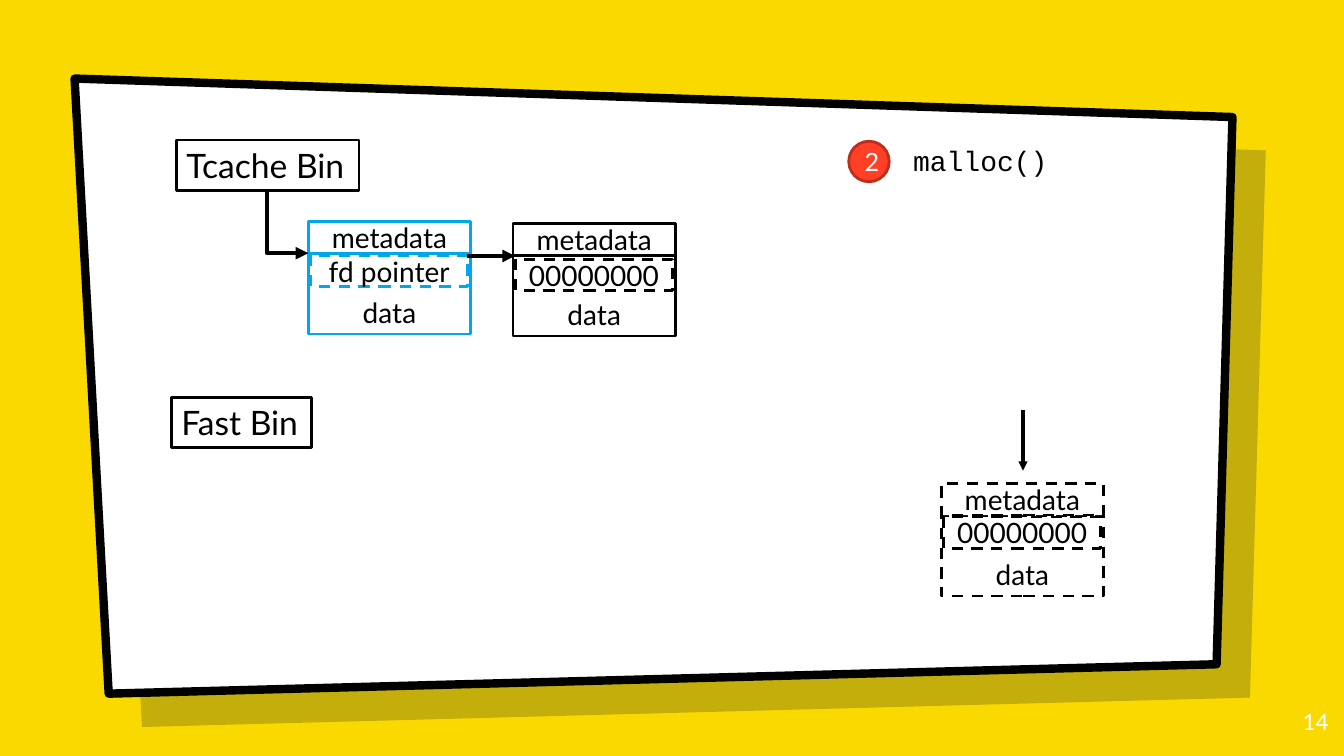
from lxml import etree
from pptx import Presentation
from pptx.dml.color import RGBColor
from pptx.enum import dml, shapes, text
from pptx.oxml import ns
from pptx.util import Cm, Pt

HUES = {
    "page": "FAD900", "shade": "001936", "white": "FFFFFF", "black": "000000",
    "blue": "00A7EB", "red": "FF4026", "rust": "BD2F1C",
}
SANS, MONO = "Lato", "Courier New"
LEFT, MID, RIGHT = text.PP_ALIGN.LEFT, text.PP_ALIGN.CENTER, text.PP_ALIGN.RIGHT
PANEL = [(1.88, 1.98), (31.06, 2.95), (30.66, 16.74), (2.74, 17.48)]


def hue(name):
    return RGBColor.from_string(HUES[name])


def write(frame, words, size, align=LEFT, color="black", font=SANS):
    para = frame.paragraphs[0]
    para.alignment = align
    run = para.add_run()
    run.text = words
    run.font.name = font
    run.font.size = Pt(size)
    run.font.color.rgb = hue(color)


def paint(shape, fill, line=None, width=2, dash=False):
    shape.shadow.inherit = False
    shape.fill.solid()
    shape.fill.fore_color.rgb = hue(fill)
    if line is None:
        shape.line.fill.background()
        return
    shape.line.color.rgb = hue(line)
    shape.line.width = Pt(width)
    if dash:
        shape.line.dash_style = dml.MSO_LINE.DASH


def block(slide, box, words, size=20, line="black", dash=False, align=MID,
          anchor=text.MSO_ANCHOR.MIDDLE, font=SANS):
    shape = slide.shapes.add_shape(shapes.MSO_SHAPE.RECTANGLE, *map(Cm, box))
    paint(shape, "white", line, dash=dash)
    shape.text_frame.vertical_anchor = anchor
    write(shape.text_frame, words, size, align, font=font)
    return shape


def arrow(slide, start, end, width=3, bent=False):
    (left, top), (right, low) = start, end
    if bent:
        mid_x, mid_y = (left + right) / 2, (top + low) / 2
        half_w, half_h = (low - top) / 2, (right - left) / 2
        start = mid_x + half_w, mid_y - half_h
        end = mid_x - half_w, mid_y + half_h
    kind = shapes.MSO_CONNECTOR.ELBOW if bent else shapes.MSO_CONNECTOR.STRAIGHT
    link = slide.shapes.add_connector(kind, *map(Cm, start + end))
    link.line.color.rgb = hue("black")
    link.line.width = Pt(width)
    props = link._element.spPr
    if bent:
        props.find(ns.qn("a:prstGeom")).set("prst", "bentConnector2")
        props.find(ns.qn("a:xfrm")).set("rot", str(270 * 60000))
    tip = etree.SubElement(props.find(ns.qn("a:ln")), ns.qn("a:tailEnd"))
    tip.set("type", "triangle")
    etree.SubElement(props, ns.qn("a:effectLst"))


def panel(slide, shift, fill, line=None):
    points = [(Cm(x + shift), Cm(y + shift)) for x, y in PANEL]
    path = slide.shapes.build_freeform(*points[0])
    path.add_line_segments(points[1:], close=True)
    shape = path.convert_to_shape()
    paint(shape, fill, line, 6)
    return shape


def frame(slide):
    slide.background.fill.solid()
    slide.background.fill.fore_color.rgb = hue("page")
    shade = panel(slide, 0.84, "shade")
    tint = shade._element.spPr.find(ns.qn("a:solidFill"))[0]
    etree.SubElement(tint, ns.qn("a:alpha")).set("val", "22000")
    panel(slide, 0, "white", "black")


def number(slide, box):
    label = slide.shapes.add_textbox(*map(Cm, box)).text_frame
    label.word_wrap = True
    label.margin_top = label.margin_bottom = Cm(0.25)
    write(label, "14", 16, RIGHT, "white")


def bin_tag(slide, box, words):
    tag = block(slide, box, words, 24, align=LEFT, anchor=text.MSO_ANCHOR.TOP)
    tag.text_frame.word_wrap = False
    tag.text_frame.auto_size = text.MSO_AUTO_SIZE.SHAPE_TO_FIT_TEXT


def step(slide, left, top):
    dot = slide.shapes.add_shape(
        shapes.MSO_SHAPE.OVAL, Cm(left), Cm(top), Cm(1.02), Cm(1.02))
    paint(dot, "red", "rust")
    write(dot.text_frame, "2", 18, MID, "white")
    block(slide, (left + 1.37, top - 0.2, 6.86, 1.35), "malloc()",
          line=None, align=LEFT, font=MONO)


def chunk(slide, left, top, words, line="black", dash=False, drop=0.84):
    block(slide, (left, top + 0.8, 4.09, 2.03), "data", line=line,
          dash=dash, anchor=text.MSO_ANCHOR.BOTTOM)
    block(slide, (left, top, 4.09, 0.79), "metadata", line=line, dash=dash)
    block(slide, (left + 0.06, top + drop, 3.96, 0.79), words,
          line=line, dash=True)


def main():
    deck = Presentation()
    deck.slide_width, deck.slide_height = Cm(33.87), Cm(19.05)
    slide = deck.slides.add_slide(deck.slide_layouts[6])
    frame(slide)
    number(slide, (31.7, 17.6, 2.03, 1.45))
    bin_tag(slide, (4.32, 10.01, 3.53, 1.27), "Fast Bin")
    bin_tag(slide, (4.45, 3.53, 4.6, 1.27), "Tcache Bin")
    step(slide, 21.39, 3.56)
    chunk(slide, 7.77, 5.59, "fd pointer", "blue")
    chunk(slide, 12.93, 5.64, "00000000", drop=0.89)
    chunk(slide, 23.72, 12.19, "00000000", dash=True)
    arrow(slide, (6.73, 4.83), (7.77, 6.38), bent=True)
    arrow(slide, (11.76, 6.45), (12.98, 6.45))
    arrow(slide, (25.78, 10.34), (25.78, 11.86), 2.25)
    deck.save("out.pptx")


if __name__ == "__main__":
    main()
